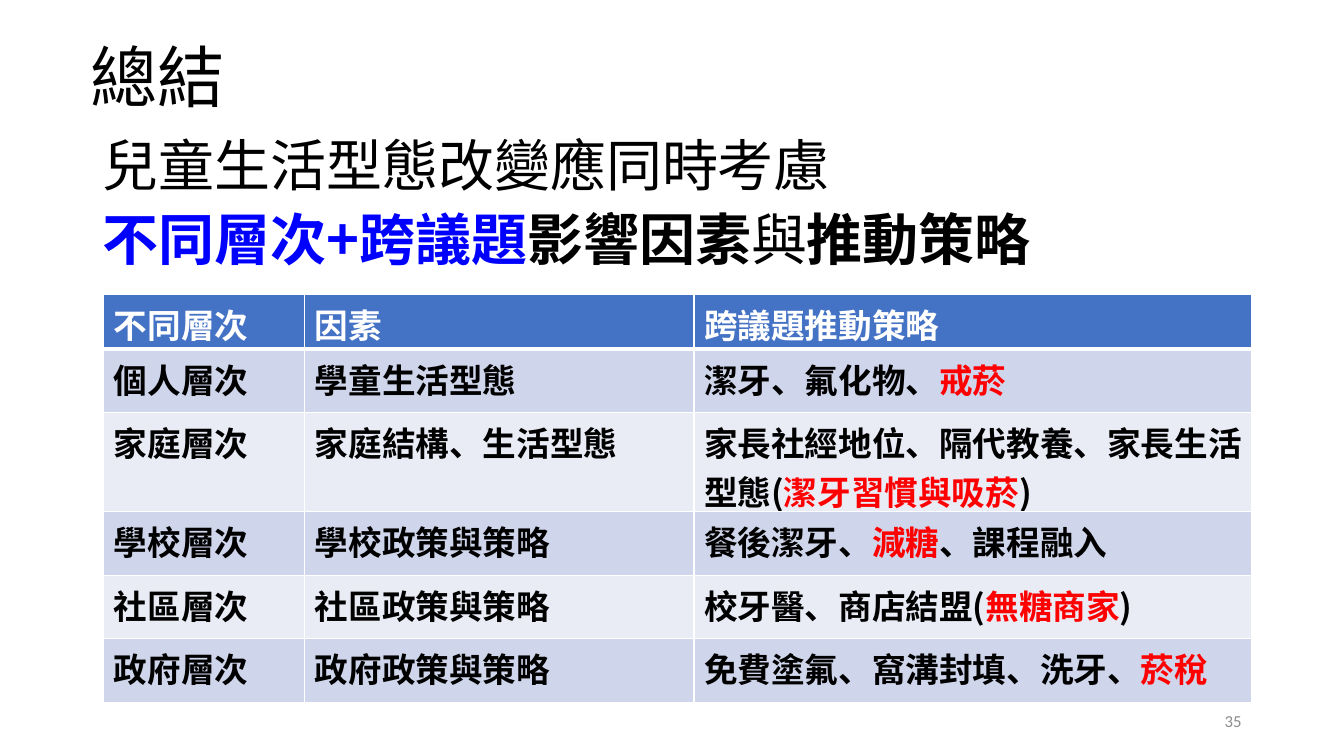
import pptx
import pptx.util
import pptx.dml.color
import pptx.enum.text
import pptx.oxml
import pptx.oxml.ns

Pt = pptx.util.Pt
RGB = pptx.dml.color.RGBColor
ANCHOR = pptx.enum.text.MSO_ANCHOR
ALIGN = pptx.enum.text.PP_ALIGN

BLACK = RGB(0x00, 0x00, 0x00)
WHITE = RGB(0xFF, 0xFF, 0xFF)
RED = RGB(0xFF, 0x00, 0x00)
BLUE = RGB(0x00, 0x00, 0xFF)
GREY = RGB(0x8C, 0x8C, 0x8C)
HEADER_BLUE = RGB(0x44, 0x72, 0xC4)
BAND_DARK = RGB(0xCF, 0xD5, 0xEA)
BAND_LIGHT = RGB(0xE9, 0xEB, 0xF5)
CJK = "Noto Sans CJK SC"


def write(paragraph, pieces, size, font=CJK, color=BLACK, bold=False,
          align=ALIGN.LEFT, line_spacing=None, space_before=0):
    paragraph.alignment = align
    paragraph.line_spacing = line_spacing
    paragraph.space_before = Pt(space_before)
    for text, *style in pieces:
        run = paragraph.add_run()
        run.text = text
        run.font.size = Pt(size)
        run.font.name = font
        run.font.color.rgb = style[0] if style else color
        run.font.bold = style[1] if len(style) > 1 else bold
        east_asian = pptx.oxml.parse_xml(
            f'<a:ea {pptx.oxml.ns.nsdecls("a")} typeface="{font}"/>')
        run.font._element.append(east_asian)


def add_border(cell, side, width):
    cell._tc.get_or_add_tcPr().append(pptx.oxml.parse_xml(
        f'<a:ln{side} {pptx.oxml.ns.nsdecls("a")} w="{Pt(width)}">'
        f'<a:solidFill><a:srgbClr val="{WHITE}"/></a:solidFill></a:ln{side}>'))


presentation = pptx.Presentation()
presentation.slide_width = Pt(960)
presentation.slide_height = Pt(540)
slide = presentation.slides.add_slide(presentation.slide_layouts[6])

title = slide.shapes.add_textbox(Pt(57.6), Pt(20), Pt(828), Pt(75)).text_frame
title.word_wrap = True
title.vertical_anchor = ANCHOR.MIDDLE
write(title.paragraphs[0], [("總結",)], 48, line_spacing=0.9)

message = slide.shapes.add_textbox(Pt(66.24), Pt(95), Pt(795), Pt(412)).text_frame
message.word_wrap = True
write(message.paragraphs[0], [("兒童生活型態改變應同時考慮",)], 40, line_spacing=0.9)
write(message.add_paragraph(),
      [("不同層次+跨議題", BLUE), ("影響因素",), ("與", BLACK, False), ("推動策略",)],
      40, bold=True, line_spacing=0.9, space_before=10)

page_number = slide.shapes.add_textbox(Pt(678), Pt(500.5), Pt(216), Pt(28.8)).text_frame
page_number.word_wrap = True
page_number.vertical_anchor = ANCHOR.MIDDLE
write(page_number.paragraphs[0], [("35",)], 12, font="Calibri", color=GREY, align=ALIGN.RIGHT)

strategies = [
    ("不同層次", "因素", [("跨議題推動策略",)]),
    ("個人層次", "學童生活型態", [("潔牙、氟化物、",), ("戒菸", RED)]),
    ("家庭層次", "家庭結構、生活型態",
     [("家長社經地位、隔代教養、家長生活型態(",), ("潔牙習慣與吸菸", RED), (")",)]),
    ("學校層次", "學校政策與策略", [("餐後潔牙、",), ("減糖", RED), ("、課程融入",)]),
    ("社區層次", "社區政策與策略", [("校牙醫、商店結盟(",), ("無糖商家", RED), (")",)]),
    ("政府層次", "政府政策與策略", [("免費塗氟、窩溝封填、洗牙、",), ("菸稅", RED)]),
]
column_widths = [143.5, 278, 398.5]
row_heights = [39, 45.4, 70.6, 45.4, 45.4, 45.4]

table = slide.shapes.add_table(
    len(strategies), len(column_widths), Pt(74.2), Pt(210.5),
    Pt(sum(column_widths)), Pt(sum(row_heights))).table
for column, width in zip(table.columns, column_widths):
    column.width = Pt(width)

for index, (level, factor, strategy) in enumerate(strategies):
    table.rows[index].height = Pt(row_heights[index])
    if index == 0:
        background = HEADER_BLUE
    else:
        background = BAND_DARK if index % 2 else BAND_LIGHT
    border_widths = {"L": 1, "R": 1, "T": 3 if index == 1 else 1, "B": 3 if index == 0 else 1}
    for cell, pieces in zip(table.rows[index].cells, ([(level,)], [(factor,)], strategy)):
        for side, width in border_widths.items():
            add_border(cell, side, width)
        cell.fill.solid()
        cell.fill.fore_color.rgb = background
        write(cell.text_frame.paragraphs[0], pieces, 24,
              color=BLACK if index else WHITE, bold=True)

presentation.save("out.pptx")
